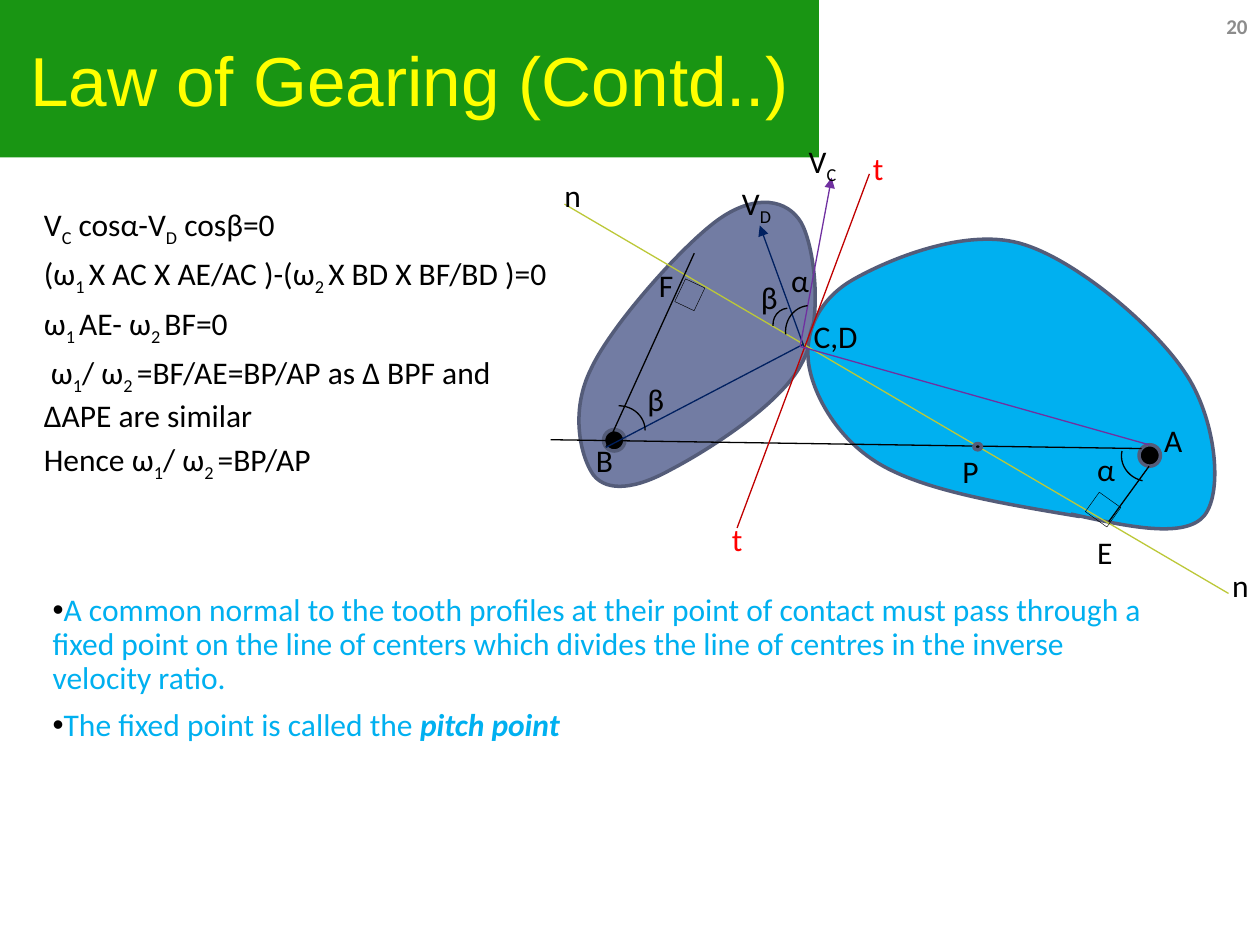
from dataclasses import dataclass

from lxml import etree
from pptx import Presentation
from pptx import util as u
from pptx.dml.color import RGBColor
from pptx.enum import shapes, text
from pptx.oxml import ns

COLORS = {
    "green": "199513", "yellow": "FFFF00", "black": "000000", "gray": "8C8C8C",
    "slate": "727CA3", "outline": "545C79", "sky": "00B0F0", "olive": "BCC838",
    "dark_red": "C00000", "red": "FF0000", "navy": "002060", "purple": "7030A0",
}


@dataclass
class Profile:
    start: tuple
    curves: list
    fill: str
    closed: bool


@dataclass
class Line:
    begin: tuple
    end: tuple
    color: str = "black"
    arrow: bool = False


@dataclass
class Label:
    text: str
    left: float
    top: float
    width: float = 0.32
    color: str = "black"


@dataclass
class Mark:
    kind: shapes.MSO_SHAPE
    box: tuple
    rotation: float = 0
    fill: str | None = None
    line: str | None = "black"
    weight: float = 0.75


PROFILES = [
    Profile((5.32, 3.73), [
        ((5.59, 3.59), (6.19, 3.22), (6.36, 2.89)),
        ((6.54, 2.57), (6.47, 1.97), (6.36, 1.77)),
        ((6.25, 1.58), (6, 1.54), (5.72, 1.73)),
        ((5.44, 1.92), (4.85, 2.58), (4.69, 2.93)),
        ((4.52, 3.27), (4.61, 3.63), (4.71, 3.77)),
        ((4.82, 3.91), (5.05, 3.88), (5.32, 3.73)),
    ], "slate", True),
    Profile((8.5, 4.08), [
        ((8.95, 4.18), (9.41, 4.28), (9.56, 4.09)),
        ((9.71, 3.9), (9.65, 3.31), (9.4, 2.95)),
        ((9.16, 2.59), (8.53, 2.05), (8.09, 1.93)),
        ((7.65, 1.81), (7.05, 2.06), (6.77, 2.22)),
        ((6.49, 2.38), (6.38, 2.65), (6.42, 2.9)),
        ((6.46, 3.14), (6.65, 3.5), (7.01, 3.7)),
        ((7.37, 3.9), (7.97, 4), (8.57, 4.1)),
    ], "sky", False),
]
PIVOTS = [
    Mark(shapes.MSO_SHAPE.OVAL, (left, top, 0.17, 0.17), 0, "black", "outline", 2)
    for left, top in [(4.79, 3.41), (9.04, 3.53)]
]
LINES = [
    Line((4.37, 3.49), (9.06, 3.56)),
    Line((4.48, 1.62), (9.75, 4.71), "olive"),
    Line((4.81, 3.55), (5.51, 2.01)),
    Line((9.12, 3.7), (8.8, 4.14)),
    Line((6.9, 1.38), (5.85, 4.19), "dark_red"),
    Line((4.81, 3.55), (6.38, 2.73), "navy"),
    Line((6.38, 2.75), (6.03, 1.79), "navy", True),
    Line((9.12, 3.53), (6.35, 2.75), "purple"),
    Line((6.35, 2.75), (6.6, 1.41), "purple", True),
]
MARKS = [
    Mark(shapes.MSO_SHAPE.OVAL, (7.73, 3.52, 0.06, 0.05), 0, "black", "outline", 2),
    Mark(shapes.MSO_SHAPE.ARC, (4.7, 3.22, 0.42, 0.39)),
    Mark(shapes.MSO_SHAPE.ARC, (8.9, 3.43, 0.42, 0.39), 192.5),
    Mark(shapes.MSO_SHAPE.ARC, (6.13, 2.45, 0.26, 0.25), 264.8),
    Mark(shapes.MSO_SHAPE.ARC, (6.22, 2.44, 0.42, 0.39), 264.5),
    Mark(shapes.MSO_SHAPE.RECTANGLE, (5.39, 2.24, 0.17, 0.2), 25.3, weight=0.25),
    Mark(shapes.MSO_SHAPE.RECTANGLE, (8.65, 3.95, 0.21, 0.19), 35.5, weight=0.25),
]
LABELS = [
    Label("n", 9.68, 4.44), Label("n", 4.38, 1.35),
    Label("t", 6.83, 1.13, 0.56, "red"), Label("t", 5.71, 4.08, color="red"),
    Label("V|D", 5.79, 1.41, 0.51), Label("V|C", 6.32, 1.08, 0.46),
    Label("A", 9.14, 3.29), Label("E", 8.61, 4.18), Label("P", 7.54, 3.54),
    Label("C,D", 6.36, 2.47, 1.04), Label("B", 4.63, 3.45),
    Label("F", 5.13, 2.06), Label("α", 8.61, 3.52), Label("β", 5.04, 2.97),
    Label("β", 5.94, 2.16), Label("α", 6.18, 2.02),
]
EQUATIONS = [
    "V|C| cosα-V|D| cosβ=0",
    "(ω|1 |X AC X AE/AC )-(ω|2 |X BD X BF/BD )=0",
    "ω|1 |AE- ω|2 |BF=0",
    " ω|1|/ ω|2 |=BF/AE=BP/AP as Δ BPF and ΔAPE are similar",
    "Hence ω|1|/ ω|2 |=BP/AP",
]
LAW = ("A common normal to the tooth profiles at their point of contact must pass "
       "through a fixed point on the line of centers which divides the line of "
       "centres in the inverse velocity ratio.")


def rgb(name: str) -> RGBColor:
    return RGBColor.from_string(COLORS[name])


def inches(values) -> list:
    return [u.Inches(value) for value in values]


def style_font(paragraph, color: str, size: float = 18, name: str = "Calibri") -> None:
    font = paragraph.font
    font.name, font.size = name, u.Pt(size)
    font.color.rgb = rgb(color)


def style_shape(shape, fill: str | None, line: str | None, weight: float = 0.75) -> None:
    shape.shadow.inherit = False
    for format_fill, color in [(shape.fill, fill), (shape.line.fill, line)]:
        if color:
            format_fill.solid()
            format_fill.fore_color.rgb = rgb(color)
        else:
            format_fill.background()
    if line:
        shape.line.width = u.Pt(weight)


def add_text(slide, box: tuple, paragraphs: list, color: str, space: float = 0):
    frame = slide.shapes.add_textbox(*inches(box)).text_frame
    frame.word_wrap = True
    for index, content in enumerate(paragraphs):
        paragraph = frame.add_paragraph() if index else frame.paragraphs[0]
        if index:
            paragraph.space_before = u.Pt(space)
        for position, part in enumerate(content.split("|")):
            run = paragraph.add_run()
            run.text = part
            if position % 2:
                run.font._element.set("baseline", "-25000")
        style_font(paragraph, color)
    return frame


def add_mark(slide, mark: Mark):
    shape = slide.shapes.add_shape(mark.kind, *inches(mark.box))
    shape.rotation = mark.rotation
    style_shape(shape, mark.fill, mark.line, mark.weight)
    return shape


def add_profile(slide, profile: Profile) -> None:
    builder = slide.shapes.build_freeform(*inches(profile.start), scale=1.0)
    anchors = [inches(curve[-1]) for curve in profile.curves]
    builder.add_line_segments(anchors, close=profile.closed)
    shape = builder.convert_to_shape()
    segments = list(shape._element.iter(ns.qn("a:lnTo")))
    for segment, curve in zip(segments, profile.curves):
        segment.tag = ns.qn("a:cubicBezTo")
        for index, control in enumerate(curve[:-1]):
            x, y = inches(control)
            point = etree.Element(ns.qn("a:pt"), x=str(x - shape.left), y=str(y - shape.top))
            segment.insert(index, point)
    style_shape(shape, profile.fill, "outline", 2)


def add_line(slide, line: Line) -> None:
    connector = slide.shapes.add_connector(
        shapes.MSO_CONNECTOR.STRAIGHT, *inches(line.begin + line.end))
    connector.line.color.rgb = rgb(line.color)
    connector.line.width = u.Pt(0.75)
    if line.arrow:
        outline = connector.line._get_or_add_ln()
        etree.SubElement(outline, ns.qn("a:tailEnd"), type="triangle")
    etree.SubElement(connector._element.spPr, ns.qn("a:effectLst"))


def add_title(slide) -> None:
    banner = Mark(shapes.MSO_SHAPE.RECTANGLE, (0, 0, 6.5, 1.25), 0, "green", None)
    frame = add_mark(slide, banner).text_frame
    frame.text = "Law of Gearing (Contd..)"
    frame.word_wrap = True
    frame.vertical_anchor = text.MSO_ANCHOR.MIDDLE
    paragraph = frame.paragraphs[0]
    paragraph.alignment = text.PP_ALIGN.CENTER
    style_font(paragraph, "yellow", 39.6, "Arial")


def add_page_number(slide) -> None:
    frame = add_text(slide, (9.08, 0, 0.92, 0.42), ["20"], "gray")
    frame.vertical_anchor = text.MSO_ANCHOR.MIDDLE
    paragraph = frame.paragraphs[0]
    paragraph.alignment = text.PP_ALIGN.RIGHT
    style_font(paragraph, "gray", 12)
    paragraph.font.bold = True


def add_conclusion(slide) -> None:
    frame = slide.shapes.add_textbox(*inches((0.32, 4.67, 8.93, 1.29))).text_frame
    frame.word_wrap = True
    contents = [[LAW], ["The fixed point is called the ", "pitch point"]]
    for index, parts in enumerate(contents):
        paragraph = frame.add_paragraph() if index else frame.paragraphs[0]
        paragraph.line_spacing = 0.9
        if index:
            paragraph.space_before = u.Pt(7)
        properties = paragraph._p.get_or_add_pPr()
        bullet_color = etree.SubElement(properties, ns.qn("a:buClr"))
        etree.SubElement(bullet_color, ns.qn("a:srgbClr"), val=COLORS["black"])
        etree.SubElement(properties, ns.qn("a:buFont"), typeface="Arial")
        etree.SubElement(properties, ns.qn("a:buChar"), char="•")
        style_font(paragraph, "sky")
        for position, part in enumerate(parts):
            run = paragraph.add_run()
            run.text = part
            if position:
                run.font.bold = run.font.italic = True


def main() -> None:
    presentation = Presentation()
    presentation.slide_width, presentation.slide_height = inches((10, 7.5))
    slide = presentation.slides.add_slide(presentation.slide_layouts[6])
    add_title(slide)
    add_text(slide, (0.25, 1.58, 4.25, 2.27), EQUATIONS, "black", 3.6)
    add_page_number(slide)
    for draw, items in [(add_profile, PROFILES), (add_mark, PIVOTS),
                        (add_line, LINES), (add_mark, MARKS)]:
        for item in items:
            draw(slide, item)
    for label in LABELS:
        box = (label.left, label.top, label.width, 0.4)
        add_text(slide, box, [label.text], label.color)
    add_conclusion(slide)
    presentation.save("out.pptx")


if __name__ == "__main__":
    main()
